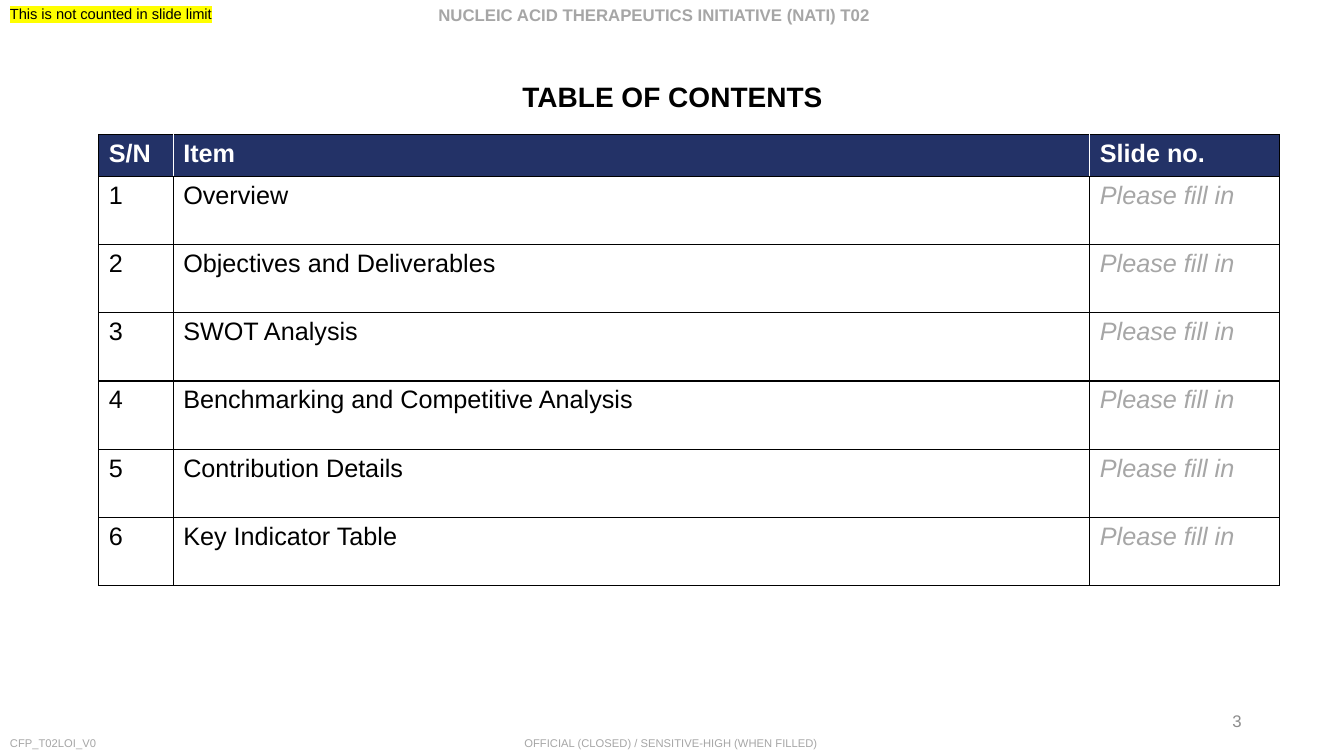
import pptx
import pptx.util
import pptx.dml.color
import pptx.enum.text
import pptx.oxml
import pptx.oxml.ns

ALIGN = pptx.enum.text.PP_ALIGN
ANCHOR = pptx.enum.text.MSO_ANCHOR
BLACK, WHITE, GREY, NAVY = "000000", "FFFFFF", "A6A6A6", "233267"
PAGE_GREY, YELLOW = "8C8C8C", "FFFF00"


def px(value):
    """Turn px (96 to the inch) into EMU."""
    return pptx.util.Emu(value * 9525)


def colour(value):
    return pptx.dml.color.RGBColor.from_string(value)


class SlideBuilder:
    font_name = "Arial"

    def __init__(self, presentation):
        title_only = presentation.slide_layouts[5]
        self.slide = presentation.slides.add_slide(title_only)

    def add_run(self, paragraph, text, size, color, bold=False, italic=False, highlight=None):
        run = paragraph.add_run()
        run.text = text
        font = run.font
        font.name, font.size = self.font_name, pptx.util.Pt(size)
        font.bold, font.italic = bold, italic
        font.color.rgb = colour(color)
        if highlight:
            mark = pptx.oxml.parse_xml(
                f'<a:highlight {pptx.oxml.ns.nsdecls("a")}>'
                f'<a:srgbClr val="{highlight}"/></a:highlight>')
            properties = run._r.get_or_add_rPr()
            properties.find(pptx.oxml.ns.qn("a:solidFill")).addnext(mark)

    def fill_text(self, shape, text, size, color, align=ALIGN.LEFT, anchor=ANCHOR.TOP,
                  wrap=True, **style):
        frame = shape.text_frame
        frame.word_wrap = wrap
        frame.auto_size = pptx.enum.text.MSO_AUTO_SIZE.NONE
        frame.vertical_anchor = anchor
        paragraph = frame.paragraphs[0]
        paragraph.alignment = align
        self.add_run(paragraph, text, size, color, **style)

    def title(self, text, left, top, width, height, size):
        shape = self.slide.shapes.title
        shape.left, shape.top = px(left), px(top)
        shape.width, shape.height = px(width), px(height)
        self.fill_text(shape, text, size, BLACK, align=ALIGN.CENTER, bold=True)

    def text(self, text, left, top, width, height, size, color, **style):
        shape = self.slide.shapes.add_textbox(px(left), px(top), px(width), px(height))
        self.fill_text(shape, text, size, color, **style)

    def border(self, cell, side, color):
        cell._tc.get_or_add_tcPr().append(pptx.oxml.parse_xml(
            f'<a:ln{side} {pptx.oxml.ns.nsdecls("a")} w="12700"><a:solidFill>'
            f'<a:srgbClr val="{color}"/></a:solidFill></a:ln{side}>'))

    def table(self, rows, left, top, widths, header_height, row_height):
        heights = [header_height] + [row_height] * (len(rows) - 1)
        table = self.slide.shapes.add_table(
            len(rows), len(widths), px(left), px(top),
            px(sum(widths)), px(sum(heights))).table
        table.first_row = table.horz_banding = False
        for column, width in zip(table.columns, widths):
            column.width = px(width)
        last = len(widths) - 1
        for row_index, values in enumerate(rows):
            table.rows[row_index].height = px(heights[row_index])
            header = row_index == 0
            inner = WHITE if header else BLACK
            for column_index, value in enumerate(values):
                cell = table.cell(row_index, column_index)
                self.border(cell, "L", inner if column_index > 0 else BLACK)
                self.border(cell, "R", inner if column_index < last else BLACK)
                self.border(cell, "T", BLACK)
                self.border(cell, "B", BLACK)
                if header:
                    cell.fill.solid()
                    cell.fill.fore_color.rgb = colour(NAVY)
                else:
                    cell.fill.background()
                prompt = not header and column_index == last
                color = WHITE if header else GREY if prompt else BLACK
                self.add_run(cell.text_frame.paragraphs[0], value, 18, color,
                             bold=header, italic=prompt)


def main():
    presentation = pptx.Presentation()
    presentation.slide_width, presentation.slide_height = px(1280), px(720)
    builder = SlideBuilder(presentation)

    # Header and footer
    builder.text("OFFICIAL (CLOSED) / SENSITIVE-HIGH (WHEN FILLED)",
                 490, 697, 301, 23, 8, GREY, wrap=False)
    builder.text("CFP_T02LOI_V0", 0, 697, 640, 23, 8, GREY)
    builder.text("NUCLEIC ACID THERAPEUTICS INITIATIVE (NATI) T02",
                 408, 0, 465, 29, 12, GREY, bold=True)
    builder.text("3", 904, 667, 288, 38, 12, PAGE_GREY,
                 align=ALIGN.RIGHT, anchor=ANCHOR.MIDDLE)

    # Contents
    builder.title("TABLE OF CONTENTS", 203, 71, 875, 42, 20)
    items = ["Overview", "Objectives and Deliverables", "SWOT Analysis",
             "Benchmarking and Competitive Analysis", "Contribution Details",
             "Key Indicator Table"]
    rows = [("S/N", "Item", "Slide no.")]
    rows += [(str(number), item, "Please fill in")
             for number, item in enumerate(items, start=1)]
    builder.table(rows, 94, 128, [71, 873, 181], 40, 65)

    # Slide limit note
    builder.text("This is not counted in slide limit", 0, 0, 231, 27, 10.5, BLACK,
                 highlight=YELLOW)

    presentation.save("out.pptx")


if __name__ == "__main__":
    main()
